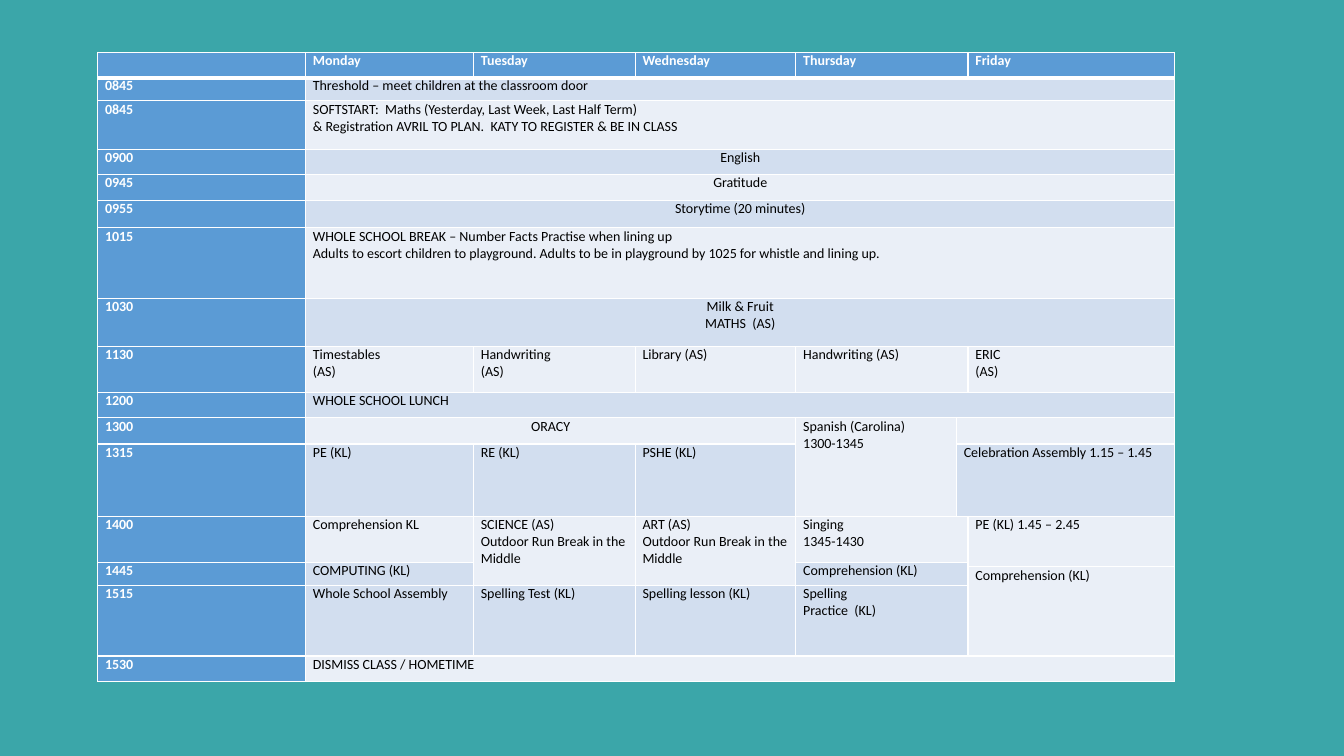
from dataclasses import dataclass

from lxml.etree import SubElement
from pptx import Presentation
from pptx.dml.color import RGBColor
from pptx.enum.text import PP_ALIGN as Align
from pptx.oxml.ns import qn
from pptx.table import Table, _Cell as Cell
from pptx.util import Emu, Pt

TEAL = RGBColor(0x3B, 0xA6, 0xA9)
BLUE = RGBColor(0x5B, 0x9B, 0xD5)
PALE_BLUE = RGBColor(0xD2, 0xDE, 0xEF)
PALEST_BLUE = RGBColor(0xEA, 0xEF, 0xF7)
WHITE = RGBColor(0xFF, 0xFF, 0xFF)
BLACK = RGBColor(0, 0, 0)

EMU_PER_PX = 9525
TABLE_LEFT, TABLE_TOP = 93, 50
COLUMN_WIDTHS = (198, 160, 154, 153, 153, 11, 197)
MON, TUE, WED, THU, THU_END, FRI = range(1, 7)
ALL_WEEK = 6
CELL_FORMAT = {"margin_left": 7, "margin_right": 7, "margin_top": 0, "margin_bottom": 0}
TEXT_FORMAT = {"name": "Calibri", "size": Pt(10)}
THIN, THICK = Pt(1), Pt(3)


@dataclass(frozen=True)
class Lesson:
    column: int
    text: str
    columns: int = 1
    rows: int = 1
    align: Align = Align.LEFT


@dataclass(frozen=True)
class Period:
    height: int
    time: str
    lessons: tuple[Lesson, ...]
    time_rows: int = 1


def whole_week(text: str, align: Align = Align.LEFT) -> tuple[Lesson, ...]:
    return (Lesson(MON, text, ALL_WEEK, align=align),)


PERIODS = (
    Period(24, "", (
        Lesson(MON, "Monday"), Lesson(TUE, "Tuesday"), Lesson(WED, "Wednesday"),
        Lesson(THU, "Thursday", 2), Lesson(FRI, "Friday"))),
    Period(22, "0845", whole_week("Threshold – meet children at the classroom door")),
    Period(46, "0845", whole_week(
        "SOFTSTART:  Maths (Yesterday, Last Week, Last Half Term)\n"
        "& Registration AVRIL TO PLAN.  KATY TO REGISTER & BE IN CLASS")),
    Period(24, "0900", whole_week("English", Align.CENTER)),
    Period(25, "0945", whole_week("Gratitude", Align.CENTER)),
    Period(26, "0955", whole_week("Storytime (20 minutes)", Align.CENTER)),
    Period(67, "1015", whole_week(
        "WHOLE SCHOOL BREAK – Number Facts Practise when lining up\n"
        "Adults to escort children to playground. "
        "Adults to be in playground by 1025 for whistle and lining up.")),
    Period(46, "1030", whole_week("Milk & Fruit\nMATHS  (AS)", Align.CENTER)),
    Period(44, "1130", (
        Lesson(MON, "Timestables\n(AS)"), Lesson(TUE, "Handwriting\n(AS)"),
        Lesson(WED, "Library (AS)"), Lesson(THU, "Handwriting (AS)", 2),
        Lesson(FRI, "ERIC\n(AS)"))),
    Period(24, "1200", whole_week("WHOLE SCHOOL LUNCH")),
    Period(25, "1300", (
        Lesson(MON, "ORACY", 3, align=Align.CENTER),
        Lesson(THU, "Spanish (Carolina)\n1300-1345", rows=2),
        Lesson(THU_END, "", 2))),
    Period(69, "1315", (
        Lesson(MON, "PE (KL)"), Lesson(TUE, "RE (KL)"), Lesson(WED, "PSHE (KL)"),
        Lesson(THU_END, "Celebration Assembly 1.15 – 1.45", 2))),
    Period(44, "1400", (
        Lesson(MON, "Comprehension KL"),
        Lesson(TUE, "SCIENCE (AS)\nOutdoor Run Break in the Middle", rows=3),
        Lesson(WED, "ART (AS)\nOutdoor Run Break in the Middle", rows=3),
        Lesson(THU, "Singing\n1345-1430", 2),
        Lesson(FRI, "PE (KL) 1.45 – 2.45", rows=2))),
    Period(4, "1445", (
        Lesson(MON, "COMPUTING (KL)", rows=2),
        Lesson(THU, "Comprehension (KL)", 2, 2)), time_rows=2),
    Period(18, "", (Lesson(FRI, "Comprehension (KL)", rows=2),)),
    Period(67, "1515", (
        Lesson(MON, "Whole School Assembly"), Lesson(TUE, "Spelling Test (KL)"),
        Lesson(WED, "Spelling lesson (KL)"), Lesson(THU, "Spelling\nPractice  (KL)", 2))),
    Period(24, "1530", whole_week("DISMISS CLASS / HOMETIME")),
)


def px(length: int) -> Emu:
    return Emu(length * EMU_PER_PX)


def draw_borders(cell: Cell, row: int) -> None:
    """White lines, thick between the day names and the first period."""
    properties = cell._tc.get_or_add_tcPr()
    widths = {"L": THIN, "R": THIN,
              "T": THICK if row == 1 else THIN,
              "B": THICK if row == 0 else THIN}
    for side, width in widths.items():
        line = SubElement(properties, qn(f"a:ln{side}"), w=str(int(width)))
        fill = SubElement(line, qn("a:solidFill"))
        SubElement(fill, qn("a:srgbClr"), val=str(WHITE))


def fill_cell(table: Table, row: int, lesson: Lesson, heading: bool) -> None:
    cell = table.cell(row, lesson.column)
    if lesson.rows > 1 or lesson.columns > 1:
        cell.merge(table.cell(row + lesson.rows - 1, lesson.column + lesson.columns - 1))
    cell.fill.solid()
    band = PALE_BLUE if row % 2 else PALEST_BLUE
    cell.fill.fore_color.rgb = BLUE if heading else band
    if not lesson.text:
        return
    cell.text = lesson.text
    for para in cell.text_frame.paragraphs:
        para.alignment = lesson.align
        for span in para.runs:
            for name, value in TEXT_FORMAT.items():
                setattr(span.font, name, value)
            span.font.bold = heading
            span.font.color.rgb = WHITE if heading else BLACK


def prepare_cells(table: Table) -> None:
    for row in range(len(PERIODS)):
        for column in range(len(COLUMN_WIDTHS)):
            cell = table.cell(row, column)
            for name, value in CELL_FORMAT.items():
                setattr(cell, name, px(value))
            draw_borders(cell, row)
            # Small type keeps empty cells from stretching their row
            para = cell.text_frame.paragraphs[0]
            SubElement(para._p, qn("a:endParaRPr"), sz="1000")


def main() -> None:
    deck = Presentation()
    deck.slide_width, deck.slide_height = px(1280), px(720)
    page = deck.slides.add_slide(deck.slide_layouts[6])
    page.background.fill.solid()
    page.background.fill.fore_color.rgb = TEAL

    # Table grid
    heights = [period.height for period in PERIODS]
    table = page.shapes.add_table(
        len(PERIODS), len(COLUMN_WIDTHS), px(TABLE_LEFT), px(TABLE_TOP),
        px(sum(COLUMN_WIDTHS)), px(sum(heights))).table
    table.first_row = table.horz_banding = False
    for column, width in zip(table.columns, COLUMN_WIDTHS):
        column.width = px(width)
    for row, height in zip(table.rows, heights):
        row.height = px(height)
    prepare_cells(table)

    # Times and lessons
    for row, period in enumerate(PERIODS):
        if not table.cell(row, 0).is_spanned:
            fill_cell(table, row, Lesson(0, period.time, rows=period.time_rows), True)
        for lesson in period.lessons:
            fill_cell(table, row, lesson, heading=row == 0)

    deck.save("out.pptx")


if __name__ == "__main__":
    main()
